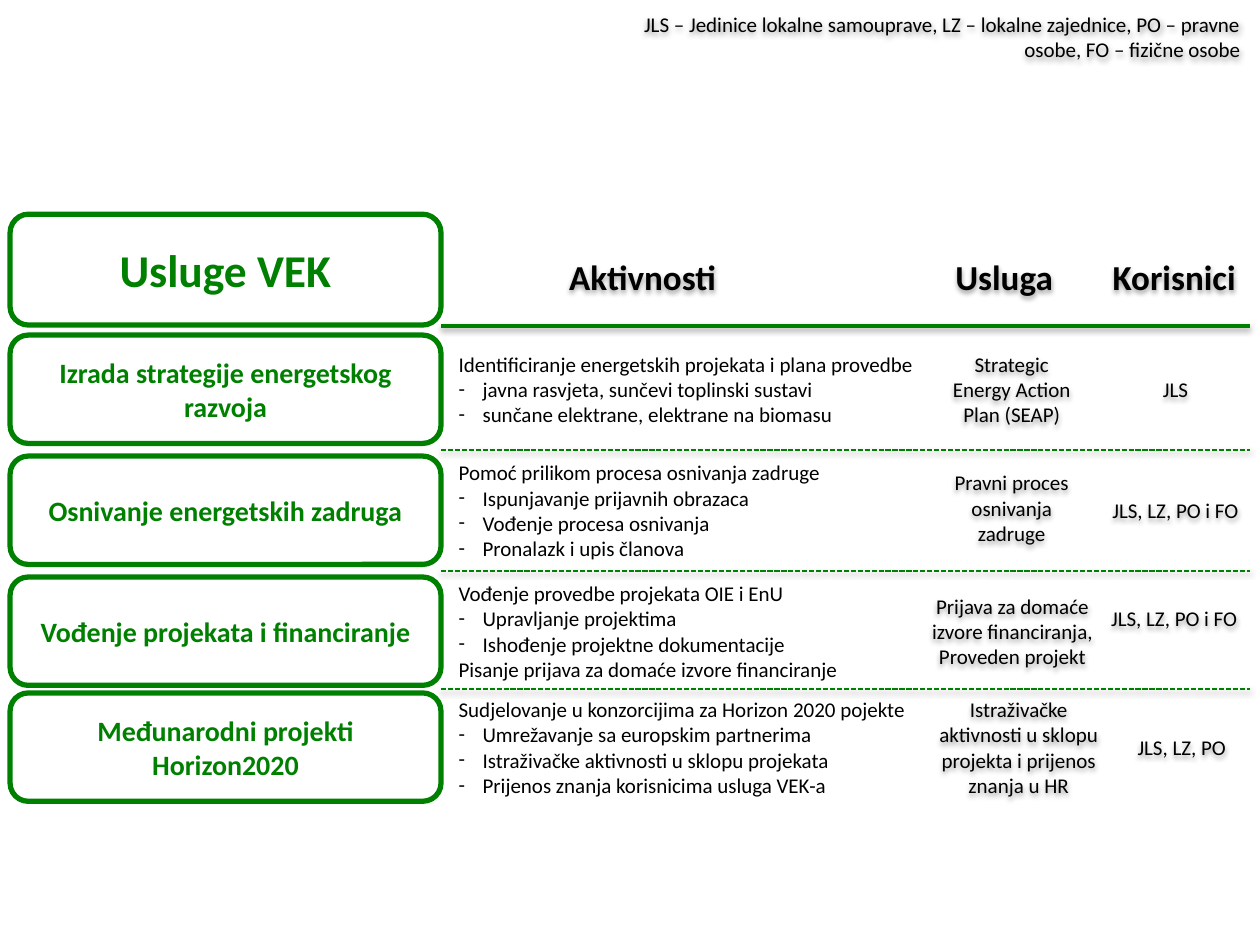
from lxml import etree
from pptx import Presentation
from pptx.dml.color import RGBColor
from pptx.enum.dml import MSO_LINE
from pptx.enum.shapes import MSO_CONNECTOR, MSO_SHAPE
from pptx.enum.text import MSO_ANCHOR, PP_ALIGN
from pptx.oxml.ns import qn
from pptx.util import Inches, Pt

GREEN = RGBColor(0x00, 0x80, 0x00)
BLACK = RGBColor(0x00, 0x00, 0x00)
LEFT, CENTER, RIGHT = PP_ALIGN.LEFT, PP_ALIGN.CENTER, PP_ALIGN.RIGHT
DASH = MSO_LINE.SQUARE_DOT
FONT = "Calibri"

# Content: a leading "- " marks a bulleted activity
NOTE = ("JLS – Jedinice lokalne samouprave, LZ – lokalne zajednice, "
        "PO – pravne osobe, FO – fizične osobe")
TITLE = "Usluge VEK"
HEADERS = [("Aktivnosti", 4.05, 2.1), ("Usluga", 7.29, 1.36), ("Korisnici", 8.64, 1.36)]
ROWS = [
    {"name": "Izrada strategije energetskog razvoja",
     "activities": ["Identificiranje energetskih projekata i plana provedbe",
                    "- javna rasvjeta, sunčevi toplinski sustavi",
                    "- sunčane elektrane, elektrane na biomasu"],
     "service": "Strategic Energy Action Plan (SEAP)", "users": "JLS"},
    {"name": "Osnivanje energetskih zadruga",
     "activities": ["Pomoć prilikom procesa osnivanja zadruge",
                    "- Ispunjavanje prijavnih obrazaca",
                    "- Vođenje procesa osnivanja",
                    "- Pronalazk i upis članova"],
     "service": "Pravni proces osnivanja zadruge", "users": "JLS, LZ, PO i FO"},
    {"name": "Vođenje projekata i financiranje",
     "activities": ["Vođenje provedbe projekata OIE i EnU",
                    "- Upravljanje projektima",
                    "- Ishođenje projektne dokumentacije",
                    "Pisanje prijava za domaće izvore financiranje"],
     "service": "Prijava za domaće izvore financiranja, Proveden projekt",
     "users": "JLS, LZ, PO i FO"},
    {"name": "Međunarodni projekti Horizon2020",
     "activities": ["Sudjelovanje u konzorcijima za Horizon 2020 pojekte",
                    "- Umrežavanje sa europskim partnerima",
                    "- Istraživačke aktivnosti u sklopu projekata",
                    "- Prijenos znanja korisnicima usluga VEK-a"],
     "service": "Istraživačke aktivnosti u sklopu projekta i prijenos znanja u HR",
     "users": "JLS, LZ, PO"},
]

# Grid, in inches
NAME_LEFT, NAME_WIDTH = 0.08, 3.42
TABLE_LEFT, TABLE_RIGHT = 3.5, 9.92
ACTIVITY_WIDTH, USER_WIDTH = 4.26, 1.36
ROW_HEIGHT = 0.86
ROW_TOPS = [2.66, 3.62, 4.58, 5.5]
SERVICE_CELLS = [(7.35, 2.66, 1.36), (7.35, 3.6, 1.36), (7.24, 4.58, 1.59), (7.29, 5.5, 1.59)]
USER_CELLS = [(8.65, 2.66), (8.65, 3.62), (8.64, 4.48), (8.7, 5.5)]
HEADER_TOP, HEADER_HEIGHT, HEADER_RULE = 1.9, 0.59, 2.59
BULLET_INDENT = Inches(0.19)


def fill_shadow(effects):
    shadow = etree.SubElement(effects, qn("a:outerShdw"), blurRad=str(Pt(3.1)),
                              dist=str(Pt(1.6)), dir="5400000", rotWithShape="0")
    color = etree.SubElement(shadow, qn("a:srgbClr"), val="000000")
    etree.SubElement(color, qn("a:alpha"), val="38000")


def add_bullet(paragraph):
    properties = paragraph._p.get_or_add_pPr()
    properties.set("marL", str(BULLET_INDENT))
    properties.set("indent", str(-BULLET_INDENT))
    etree.SubElement(properties, qn("a:buFont"), typeface=FONT)
    etree.SubElement(properties, qn("a:buChar"), char="-")


def add_text(slide, text, left, top, width, height, size=12, color=BLACK,
             bold=False, align=CENTER, outline=False, shadow=True):
    """Add a rounded box holding a string or a list of lines."""
    shape = slide.shapes.add_shape(MSO_SHAPE.ROUNDED_RECTANGLE, Inches(left), Inches(top),
                                   Inches(width), Inches(height))
    shape.fill.background()
    if outline:
        shape.line.color.rgb = GREEN
        shape.line.width = Pt(3)
    else:
        shape.line.fill.background()
    shape.shadow.inherit = False
    if shadow:
        fill_shadow(shape._element.spPr.find(qn("a:effectLst")))
    frame = shape.text_frame
    frame.word_wrap = True
    frame.vertical_anchor = MSO_ANCHOR.MIDDLE
    lines = [text] if isinstance(text, str) else text
    for index, line in enumerate(lines):
        paragraph = frame.add_paragraph() if index else frame.paragraphs[0]
        paragraph.alignment = align
        if line.startswith("- "):
            add_bullet(paragraph)
        run = paragraph.add_run()
        run.text = line.removeprefix("- ")
        run.font.name, run.font.size, run.font.bold = FONT, Pt(size), bold
        run.font.color.rgb = color


def add_rule(slide, y, width=1, dash=None):
    rule = slide.shapes.add_connector(MSO_CONNECTOR.STRAIGHT, Inches(TABLE_LEFT), Inches(y),
                                      Inches(TABLE_RIGHT), Inches(y))
    rule.line.color.rgb = GREEN
    rule.line.width = Pt(width)
    if dash:
        rule.line.dash_style = dash
    fill_shadow(etree.SubElement(rule._element.spPr, qn("a:effectLst")))


def main():
    presentation = Presentation()
    presentation.slide_width, presentation.slide_height = Inches(10), Inches(7.5)
    slide = presentation.slides.add_slide(presentation.slide_layouts[6])

    # Legend and header row
    add_text(slide, NOTE, 4.84, 0.13, 5.12, 0.32, align=RIGHT)
    add_text(slide, TITLE, NAME_LEFT, 1.7, NAME_WIDTH, 0.88, size=26, color=GREEN,
             bold=True, outline=True, shadow=False)
    for header, left, width in HEADERS:
        add_text(slide, header, left, HEADER_TOP, width, HEADER_HEIGHT, size=20, bold=True)

    # Rules under the header and between rows
    add_rule(slide, HEADER_RULE, width=2.25)
    for above, below in zip(ROW_TOPS, ROW_TOPS[1:]):
        add_rule(slide, (above + ROW_HEIGHT + below) / 2, dash=DASH)

    # Service rows
    for row, top, service, users in zip(ROWS, ROW_TOPS, SERVICE_CELLS, USER_CELLS):
        add_text(slide, row["name"], NAME_LEFT, top, NAME_WIDTH, ROW_HEIGHT, size=16,
                 color=GREEN, bold=True, outline=True, shadow=False)
        add_text(slide, row["activities"], TABLE_LEFT, top, ACTIVITY_WIDTH, ROW_HEIGHT,
                 align=LEFT, shadow=False)
        service_left, service_top, service_width = service
        add_text(slide, row["service"], service_left, service_top, service_width, ROW_HEIGHT)
        add_text(slide, row["users"], *users, USER_WIDTH, ROW_HEIGHT)

    presentation.save("out.pptx")


if __name__ == "__main__":
    main()
